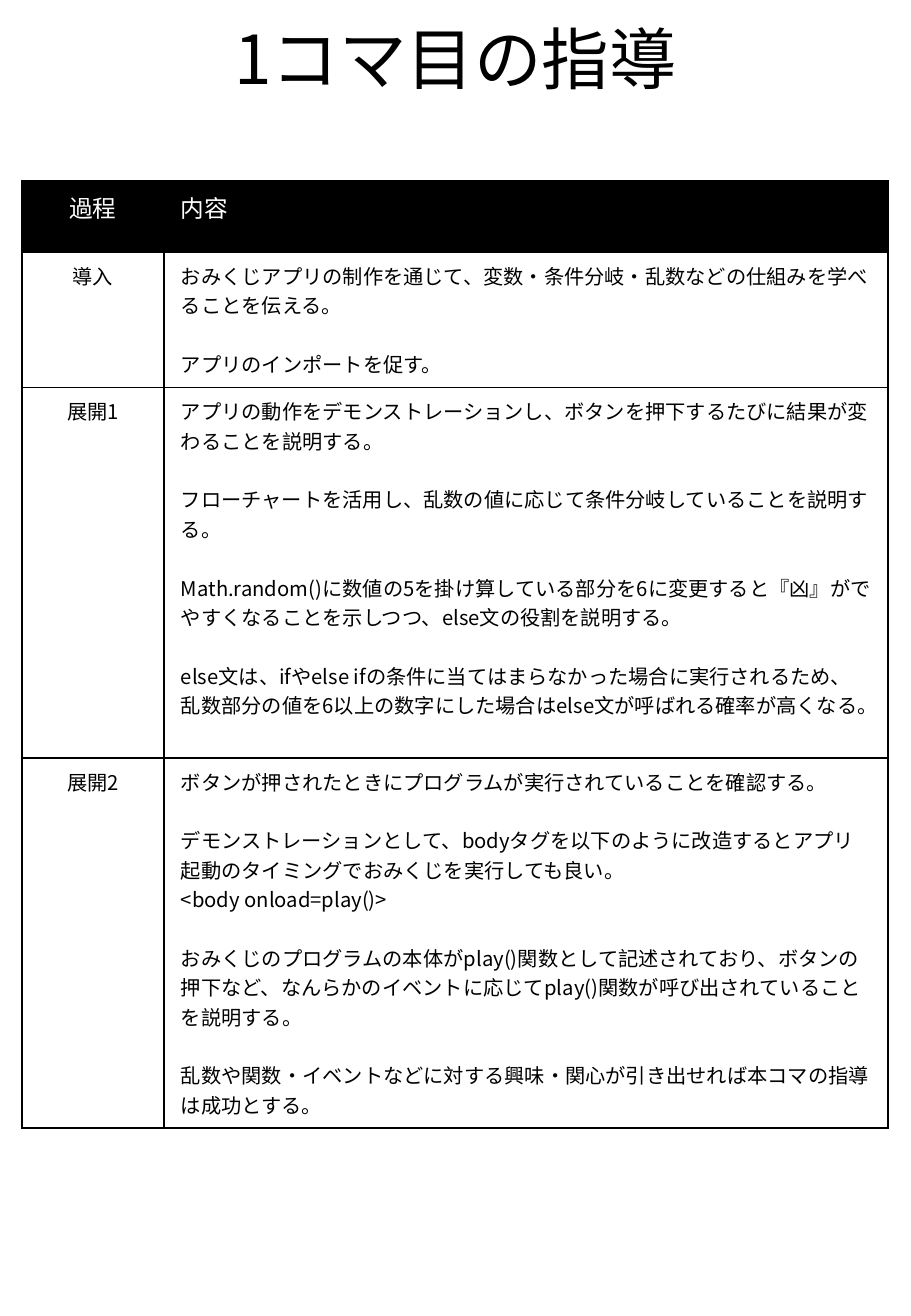
from lxml import etree
from pptx import Presentation, util as u
from pptx.dml import color
from pptx.enum import text
from pptx.oxml import ns

SCALE = 7526  # EMU per px
FONT = "Noto Sans CJK JP"
BLANK_LINE = 17.4  # points, one line of body text
BLACK, WHITE = "000000", "FFFFFF"


def px(length):
    return u.Emu(length * SCALE)


def write(para, words, size=12, ink=BLACK, align=text.PP_ALIGN.LEFT, gap=0, leading=1.0):
    para.alignment = align
    para.space_before = u.Pt(gap)
    para.line_spacing = leading
    span = para.add_run()
    span.text = words
    span.font.name = FONT
    span.font.size = u.Pt(size)
    span.font.bold = False
    span.font.color.rgb = color.RGBColor.from_string(ink)
    etree.SubElement(span.font._element, ns.qn("a:ea"), typeface=FONT)


# Each row is a stage and its blocks; a blank line parts the blocks
lesson = [
    ("過程", [["内容"]]),
    ("導入", [
        ["おみくじアプリの制作を通じて、変数・条件分岐・乱数などの仕組みを学べることを伝える。"],
        ["アプリのインポートを促す。"],
    ]),
    ("展開1", [
        ["アプリの動作をデモンストレーションし、ボタンを押下するたびに結果が変わることを説明する。"],
        ["フローチャートを活用し、乱数の値に応じて条件分岐していることを説明する。"],
        ["Math.random()に数値の5を掛け算している部分を6に変更すると『凶』がでやすくなることを示しつつ、"
         "else文の役割を説明する。"],
        ["else文は、ifやelse ifの条件に当てはまらなかった場合に実行されるため、"
         "乱数部分の値を6以上の数字にした場合はelse文が呼ばれる確率が高くなる。"],
    ]),
    ("展開2", [
        ["ボタンが押されたときにプログラムが実行されていることを確認する。"],
        ["デモンストレーションとして、bodyタグを以下のように改造すると"
         "アプリ起動のタイミングでおみくじを実行しても良い。",
         "<body onload=play()>"],
        ["おみくじのプログラムの本体がplay()関数として記述されており、ボタンの押下など、"
         "なんらかのイベントに応じてplay()関数が呼び出されていることを説明する。"],
        ["乱数や関数・イベントなどに対する興味・関心が引き出せれば本コマの指導は成功とする。"],
    ]),
]
column_widths = [142, 724]
row_heights = [71, 135, 370, 370]

# Page
deck = Presentation()
deck.slide_width, deck.slide_height = px(911), px(1316)
page = deck.slides.add_slide(deck.slide_layouts[5])

# Title
title = page.shapes.title
title.left, title.top, title.width, title.height = px(68), px(7), px(775), px(98)
title.text_frame.vertical_anchor = text.MSO_ANCHOR.BOTTOM
title.text_frame.auto_size = text.MSO_AUTO_SIZE.NONE
write(title.text_frame.paragraphs[0], "1コマ目の指導", size=40,
      align=text.PP_ALIGN.CENTER, leading=0.9)

# Table grid
table = page.shapes.add_table(len(lesson), 2, px(22), px(181),
                              px(sum(column_widths)), px(sum(row_heights))).table
table.first_row = table.horz_banding = False
for column, width in zip(table.columns, column_widths):
    column.width = px(width)
for row, height in zip(table.rows, row_heights):
    row.height = px(height)

# Cells
for r, (stage, blocks) in enumerate(lesson):
    size, ink, fill = (14, WHITE, BLACK) if r == 0 else (12, BLACK, WHITE)
    for c, content in enumerate([[[stage]], blocks]):
        cell = table.cell(r, c)
        cell.margin_left = cell.margin_right = px(17)
        cell.margin_top = cell.margin_bottom = px(9)

        # Borders come before the fill in the cell properties
        properties = cell._tc.get_or_add_tcPr()
        for side in ("lnL", "lnR", "lnT", "lnB"):
            border = etree.SubElement(properties, ns.qn(f"a:{side}"), w=str(u.Pt(1)))
            paint = etree.SubElement(border, ns.qn("a:solidFill"))
            etree.SubElement(paint, ns.qn("a:srgbClr"), val=BLACK)
        cell.fill.solid()
        cell.fill.fore_color.rgb = color.RGBColor.from_string(fill)

        align = text.PP_ALIGN.CENTER if c == 0 else text.PP_ALIGN.LEFT
        frame = cell.text_frame
        for b, block in enumerate(content):
            for n, line in enumerate(block):
                para = frame.paragraphs[0] if b == n == 0 else frame.add_paragraph()
                gap = BLANK_LINE if b > 0 and n == 0 else 0
                write(para, line, size=size, ink=ink, align=align, gap=gap)

deck.save("out.pptx")
